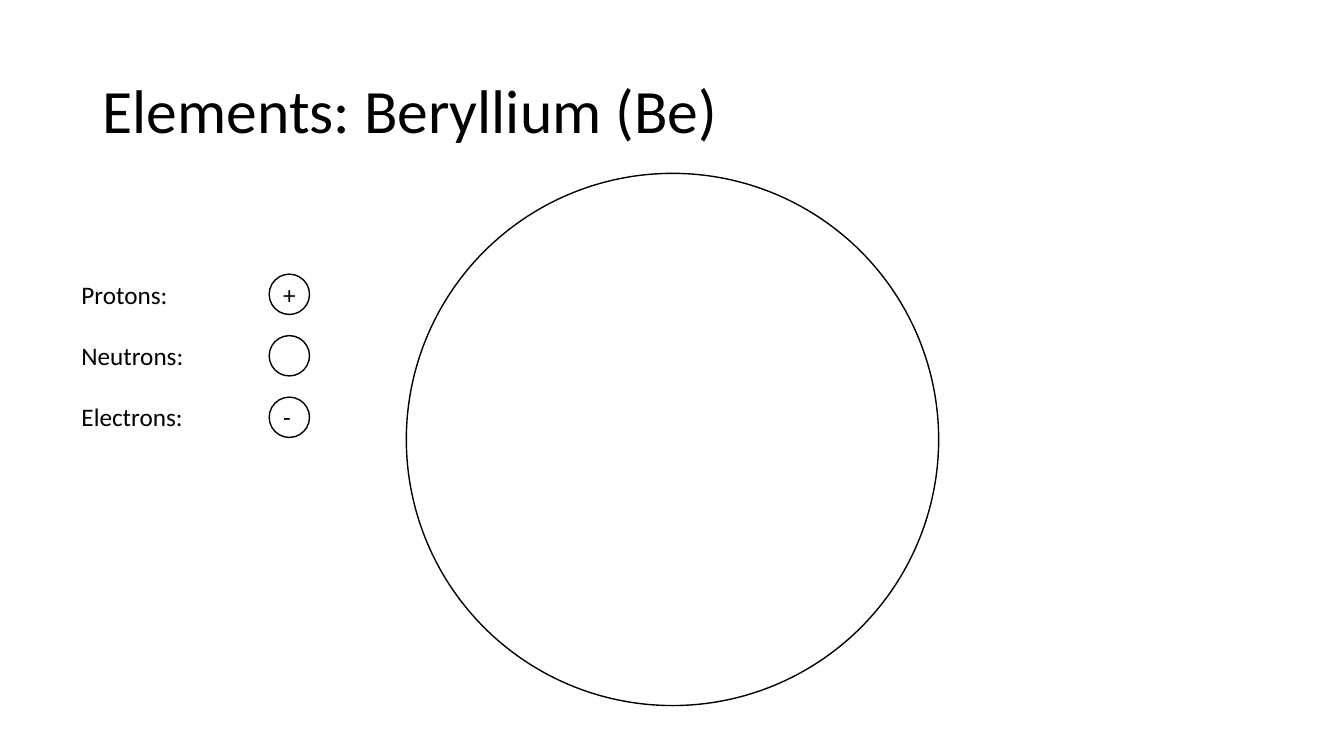
from dataclasses import dataclass

from lxml.etree import SubElement
from pptx import Presentation
from pptx.dml.color import RGBColor
from pptx.enum.shapes import MSO_SHAPE
from pptx.enum.text import MSO_ANCHOR
from pptx.oxml.ns import qn
from pptx.util import Inches, Pt


@dataclass(frozen=True)
class Theme:
    """Colours, font and type sizes of the slide."""
    ink: RGBColor = RGBColor(0, 0, 0)
    paper: RGBColor = RGBColor(255, 255, 255)
    font: str = "Calibri"
    title: int = 44
    body: int = 18
    line: int = 1


THEME = Theme()
PARTS = [("Protons:", "+"), ("Neutrons:", ""), ("Electrons:", "-")]


def style(para, size):
    """Set the font of a paragraph."""
    para.font.name = THEME.font
    para.font.size = Pt(size)
    para.font.color.rgb = THEME.ink


def add_text(slide, left, top, width, height):
    """Add a wrapping text box and return its frame."""
    frame = slide.shapes.add_textbox(
        Inches(left), Inches(top), Inches(width), Inches(height)).text_frame
    frame.word_wrap = True
    return frame


def add_circle(slide, left, top, size, fill=None):
    """Draw an outlined circle, filled if a colour is given."""
    circle = slide.shapes.add_shape(
        MSO_SHAPE.OVAL, Inches(left), Inches(top), Inches(size), Inches(size))
    circle.shadow.inherit = False
    circle.line.color.rgb = THEME.ink
    circle.line.width = Pt(THEME.line)
    if fill is None:
        circle.fill.background()
    else:
        circle.fill.solid()
        circle.fill.fore_color.rgb = fill


def add_title(slide, text, left, top, width, height):
    """Place the title in the middle of its box's height."""
    frame = add_text(slide, left, top, width, height)
    frame.vertical_anchor = MSO_ANCHOR.MIDDLE
    para = frame.paragraphs[0]
    para.text = text
    para.line_spacing = 0.9
    style(para, THEME.title)


def add_legend(slide, parts, left, top, width, height):
    """List the particles, with a ring around each sign."""
    frame = add_text(slide, left, top, width, height)
    ring, pitch = 0.4, 0.61
    for row, (name, sign) in enumerate(parts):
        para = frame.paragraphs[0] if row == 0 else frame.add_paragraph()
        para.text = f"{name}\t{sign}" if sign else name
        if row:
            para.space_before = Pt(22)
        tabs = SubElement(para._p.get_or_add_pPr(), qn("a:tabLst"))
        SubElement(tabs, qn("a:tab"), pos=str(Inches(2)), algn="l")
        style(para, THEME.body)
        add_circle(slide, left + 1.96, top + row * pitch, ring)


def main():
    """Build and save the slide."""
    deck = Presentation()
    deck.slide_width, deck.slide_height = Inches(13.33), Inches(7.5)
    slide = deck.slides.add_slide(deck.slide_layouts[6])
    add_title(slide, "Elements: Beryllium (Be)", 0.92, 0.4, 11.5, 1.45)
    add_circle(slide, 4.03, 1.72, 5.28, THEME.paper)
    add_legend(slide, PARTS, 0.71, 2.72, 2.93, 1.62)
    deck.save("out.pptx")


if __name__ == "__main__":
    main()
